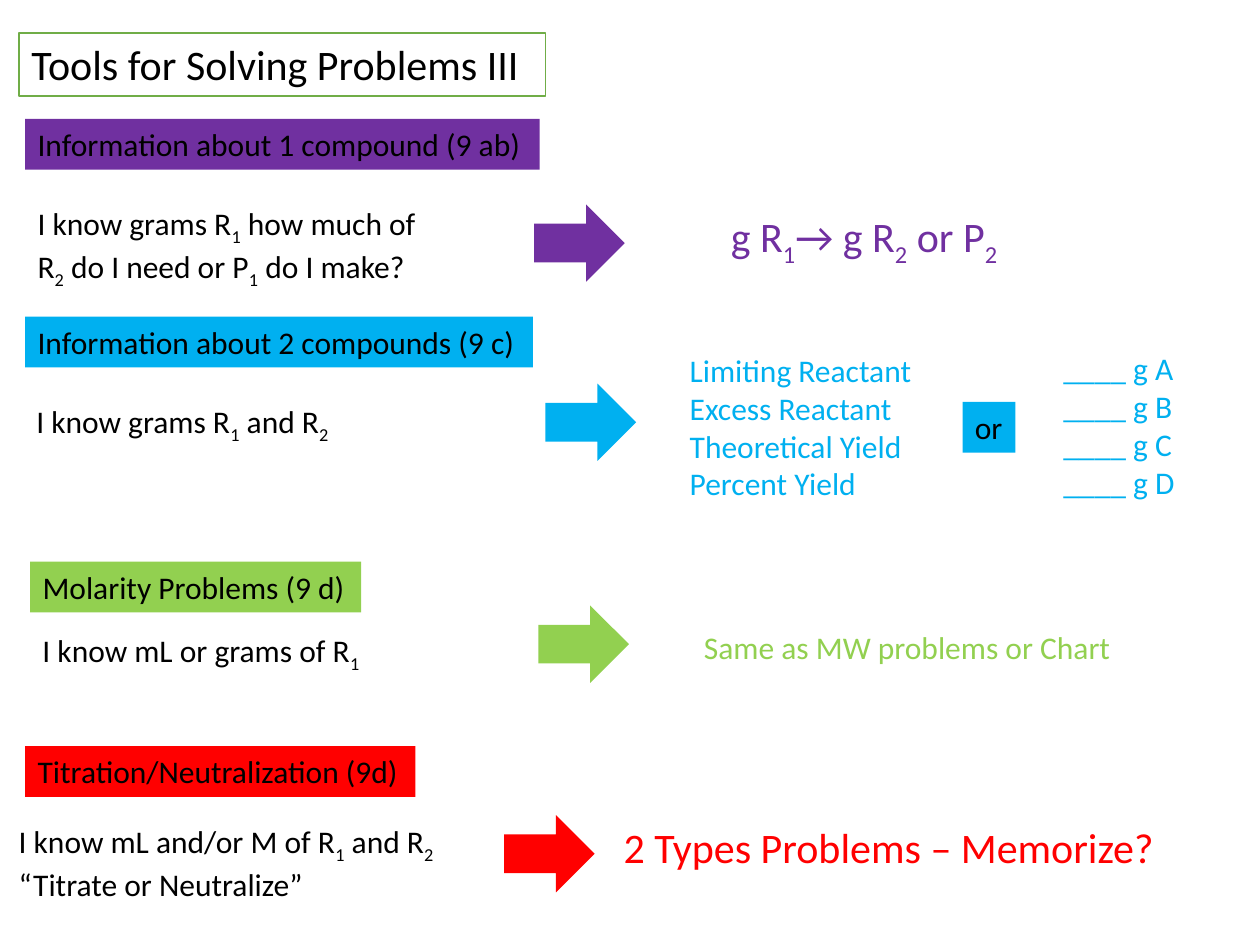
from pptx import Presentation
from pptx.dml.color import RGBColor
from pptx.enum.shapes import MSO_SHAPE as Shape
from pptx.enum.text import MSO_AUTO_SIZE as AutoSize, MSO_ANCHOR as Anchor, PP_ALIGN as Align
from pptx.util import Pt

COLORS = {
    "black": "000000", "white": "FFFFFF", "outline": "70AD47",
    "purple": "7030A0", "blue": "00B0F0", "green": "92D050", "red": "FF0000",
}
FONT = "Calibri"
BODY, LARGE = 18, 24
ARROW_SIZE = (51.8, 44.2)
LINE_HEIGHT = {BODY: 21.8, LARGE: 28.8}
INSETS = 7.2

# Content: boxes are (left, top, width); "~" puts the next character in subscript
TITLE = ("Tools for Solving Problems III", (10.8, 18.7, 301))
SECTIONS = [
    {
        "color": "purple",
        "heading": ("Information about 1 compound (9 ab)", (14.4, 67.9, 294)),
        "question": (["I know grams R~1 how much of R~2 do I need or P~1 do I make?"],
                     (14.4, 113.2, 247.7)),
        "arrow": (305.2, 116.8),
        "answers": [(["g R~1→ g R~2 or P~2"], LARGE, (410.6, 116.8, 170.6))],
    },
    {
        "color": "blue",
        "heading": ("Information about 2 compounds (9 c)", (14.4, 181, 290.2)),
        "question": (["I know grams R~1 and R~2"], (13.7, 226.1, 247.7)),
        "arrow": (311.7, 219.2),
        "answers": [
            (["Limiting Reactant", "Excess Reactant", "Theoretical Yield", "Percent Yield"],
             BODY, (387, 197, 142.6)),
            ([f"____ g {letter}" for letter in "ABCD"], BODY, (600.5, 196, 82.8)),
        ],
        "connective": ("or", (550, 229.6, 30.2)),
    },
    {
        "color": "green",
        "heading": ("Molarity Problems (9 d)", (17.2, 320.9, 189.2)),
        "question": (["I know mL or grams of R~1"], (17.2, 357.3, 247.7)),
        "arrow": (307.6, 346),
        "answers": [(["Same as MW problems or Chart"], BODY, (395.2, 355.3, 249.1))],
    },
    {
        "color": "red",
        "heading": ("Titration/Neutralization (9d)", (14.4, 426.4, 223)),
        "question": (["I know mL and/or M of R~1 and R~2", "“Titrate or Neutralize”"],
                     (3.6, 466, 267.8)),
        "arrow": (288, 465.8),
        "answers": [(["2 Types Problems – Memorize?"], LARGE, (349.2, 466, 320.4))],
    },
]


def rgb(name):
    return RGBColor.from_string(COLORS[name])


def add_run(paragraph, text, size, color, subscript=False):
    if not text:
        return
    run = paragraph.add_run()
    run.text = text
    run.font.name = FONT
    run.font.size = Pt(size)
    run.font.color.rgb = rgb(color)
    if subscript:
        run.font._element.set("baseline", "-25000")


def write(shape, lines, size, color, wrap=False):
    frame = shape.text_frame
    frame.word_wrap = wrap
    frame.auto_size = AutoSize.SHAPE_TO_FIT_TEXT
    frame.vertical_anchor = Anchor.TOP
    for index, line in enumerate(lines):
        paragraph = frame.add_paragraph() if index else frame.paragraphs[0]
        paragraph.alignment = Align.LEFT
        first, *rest = line.split("~")
        add_run(paragraph, first, size, color)
        for part in rest:
            add_run(paragraph, part[0], size, color, subscript=True)
            add_run(paragraph, part[1:], size, color)


def add_filled(shapes, preset, left, top, width, height, fill, line=None):
    shape = shapes.add_shape(preset, Pt(left), Pt(top), Pt(width), Pt(height))
    shape.shadow.inherit = False
    shape.fill.solid()
    shape.fill.fore_color.rgb = rgb(fill)
    if line:
        shape.line.color.rgb = rgb(line)
        shape.line.width = Pt(1)
    else:
        shape.line.fill.background()
    return shape


def add_label(shapes, text, box, size, fill, line=None):
    height = LINE_HEIGHT[size] + INSETS
    label = add_filled(shapes, Shape.RECTANGLE, *box, height, fill, line)
    write(label, [text], size, "black")


def add_text(shapes, lines, box, size, color, wrap=False, rows=None):
    height = LINE_HEIGHT[size] * (rows or len(lines)) + INSETS
    left, top, width = box
    text_box = shapes.add_textbox(Pt(left), Pt(top), Pt(width), Pt(height))
    write(text_box, lines, size, color, wrap)


def add_section(slide, section):
    shapes = slide.shapes.add_group_shape().shapes
    color = section["color"]
    add_label(shapes, *section["heading"], BODY, color)

    # Question on the left; long ones wrap onto a second row
    lines, box = section["question"]
    rows = 2 if len("".join(lines)) > 30 else 1
    add_text(shapes, lines, box, BODY, "black", wrap=True, rows=rows)

    # Arrow leading to the answers
    add_filled(shapes, Shape.RIGHT_ARROW, *section["arrow"], *ARROW_SIZE, color)
    for lines, size, box in section["answers"]:
        add_text(shapes, lines, box, size, color)
    if "connective" in section:
        add_label(shapes, *section["connective"], BODY, color)


def main():
    presentation = Presentation()
    presentation.slide_width, presentation.slide_height = Pt(720), Pt(540)
    slide = presentation.slides.add_slide(presentation.slide_layouts[6])
    add_label(slide.shapes, *TITLE, LARGE, "white", "outline")
    for section in SECTIONS:
        add_section(slide, section)
    presentation.save("out.pptx")


if __name__ == "__main__":
    main()
